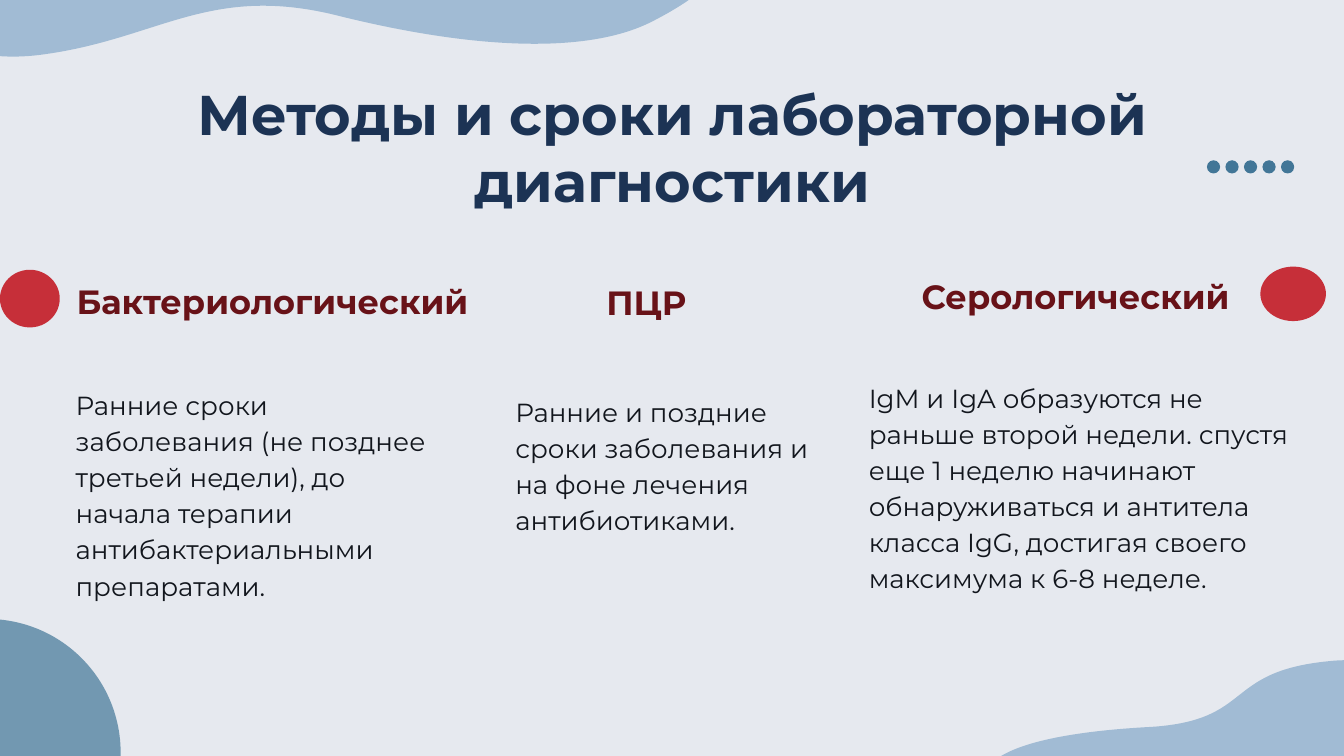
"""Build a slide on laboratory diagnosis methods and their timing."""
from dataclasses import dataclass

from lxml import etree
from pptx import Presentation
from pptx.dml.color import RGBColor
from pptx.enum.shapes import MSO_SHAPE
from pptx.enum.text import MSO_ANCHOR, PP_ALIGN
from pptx.oxml.ns import qn
from pptx.util import Cm, Pt

OVAL = MSO_SHAPE.OVAL
TOP, MIDDLE, BOTTOM = MSO_ANCHOR.TOP, MSO_ANCHOR.MIDDLE, MSO_ANCHOR.BOTTOM
LEFT, CENTER = PP_ALIGN.LEFT, PP_ALIGN.CENTER


@dataclass(frozen=True)
class Theme:
    font: str = "Montserrat"
    background: str = "E6E9EF"
    wave: str = "A1BBD4"
    accent: str = "427697"
    marker: str = "C62F39"
    title: str = "1C3354"
    heading: str = "681218"
    body: str = "12161D"
    title_size: int = 30
    heading_size: int = 18
    body_size: int = 14


theme = Theme()


def paint(shape, color):
    shape.shadow.inherit = False
    shape.fill.solid()
    shape.fill.fore_color.rgb = RGBColor.from_string(color)
    shape.line.fill.background()


def add_text(box, text, size, color, bold=False, align=LEFT, anchor=TOP,
             spacing=1.15, indent=(0, 0), bottom=0.25):
    frame = slide.shapes.add_textbox(*map(Cm, box)).text_frame
    frame.word_wrap = True
    frame.vertical_anchor = anchor
    frame.margin_left = frame.margin_right = frame.margin_top = Cm(0.25)
    frame.margin_bottom = Cm(bottom)
    paragraph = frame.paragraphs[0]
    paragraph.text = text
    paragraph.alignment = align
    paragraph.line_spacing = spacing
    paragraph.font.name = theme.font
    paragraph.font.size = Pt(size)
    paragraph.font.bold = bold
    paragraph.font.color.rgb = RGBColor.from_string(color)
    properties = paragraph._p.get_or_add_pPr()
    for name, length in zip(("marL", "indent"), indent):
        properties.set(name, str(Cm(length)))


presentation = Presentation()
presentation.slide_width = Cm(25.4)
presentation.slide_height = Cm(14.29)
slide = presentation.slides.add_slide(presentation.slide_layouts[6])
slide.background.fill.solid()
slide.background.fill.fore_color.rgb = RGBColor.from_string(theme.background)

for index in range(5):
    dot = slide.shapes.add_shape(OVAL, Cm(22.81 + 0.35 * index), Cm(3.03), Cm(0.25), Cm(0.25))
    paint(dot, theme.accent)

bottom_wave = [
    (26.92, 13.79), (26.92, 13.79), (27.05, 12.29), (25.1, 12.5),
    (23.11, 12.7), (23.7, 13.61), (21.77, 13.74),
    (19.84, 13.84), (18.69, 14.17), (18.62, 14.66),
    (18.52, 15.14), (26.75, 14.99), (26.75, 14.99),
]
top_wave = [
    (-2.67, -0.41), (-2.67, -0.41), (-1.52, 1.32), (0.74, 1.04),
    (2.97, 0.76), (3.91, -0.3), (6.32, 0.28),
    (8.74, 0.89), (11.02, 1.07), (12.32, 0.41),
    (13.61, -0.25), (13.51, -0.58), (13.51, -0.58),
]
for wave in (bottom_wave, top_wave):
    points = [(Cm(x), Cm(y)) for x, y in wave]
    builder = slide.shapes.build_freeform(*points[0])
    builder.add_line_segments(points[3::3], close=True)
    shape = builder.convert_to_shape()
    paint(shape, theme.wave)
    for index, segment in enumerate(list(shape._element.iter(qn("a:lnTo")))[:4]):
        curve = etree.Element(qn("a:cubicBezTo"))
        for x, y in points[3 * index + 1:3 * index + 4]:
            point = etree.SubElement(curve, qn("a:pt"))
            point.set("x", str(x - shape.left))
            point.set("y", str(y - shape.top))
        segment.getparent().replace(segment, curve)

corner_circle = slide.shapes.add_shape(OVAL, Cm(-2.77), Cm(11.7), Cm(5.05), Cm(5.05))
paint(corner_circle, theme.accent)
fill_color = corner_circle.fill._xPr.find(qn("a:solidFill"))[0]
etree.SubElement(fill_color, qn("a:alpha")).set("val", "70000")

for box in ((23.82, 5.04, 1.24, 1.03), (0, 5.1, 1.13, 1.09)):
    marker = slide.shapes.add_shape(OVAL, *map(Cm, box))
    paint(marker, theme.marker)

add_text((2, 1.25, 21.41, 2.79), "Методы и сроки лабораторной диагностики",
         theme.title_size, theme.title, True, CENTER, spacing=1.0)

bodies = [
    ((1.18, 7.03, 7.24, 5.28), TOP, (0, 0), 0.25,
     "Ранние сроки заболевания (не позднее третьей недели), до начала терапии "
     "антибактериальными препаратами."),
    ((9.49, 7.16, 6.17, 4.39), TOP, (0, 0), 0.25,
     "Ранние и поздние сроки заболевания и на фоне лечения антибиотиками."),
    ((15.92, 7.01, 8.89, 5.05), BOTTOM, (0.25, 0), 0.84,
     "IgM и IgA образуются не раньше второй недели. спустя еще 1 неделю начинают "
     "обнаруживаться и антитела класса IgG, достигая своего максимума к 6-8 неделе."),
]
for box, anchor, indent, bottom, text in bodies:
    add_text(box, text, theme.body_size, theme.body,
             anchor=anchor, indent=indent, bottom=bottom)

headings = [
    ((1.2, 4.52, 8, 1.8), LEFT, BOTTOM, (0, 0), "Бактериологический"),
    ((8.43, 4.73, 7.19, 1.85), CENTER, MIDDLE, (1.27, -0.89), "ПЦР"),
    ((16.51, 5, 7.26, 1.22), CENTER, BOTTOM, (1.27, -0.89), "Серологический"),
]
for box, align, anchor, indent, text in headings:
    add_text(box, text, theme.heading_size, theme.heading, True, align, anchor, indent=indent)

presentation.save("out.pptx")
